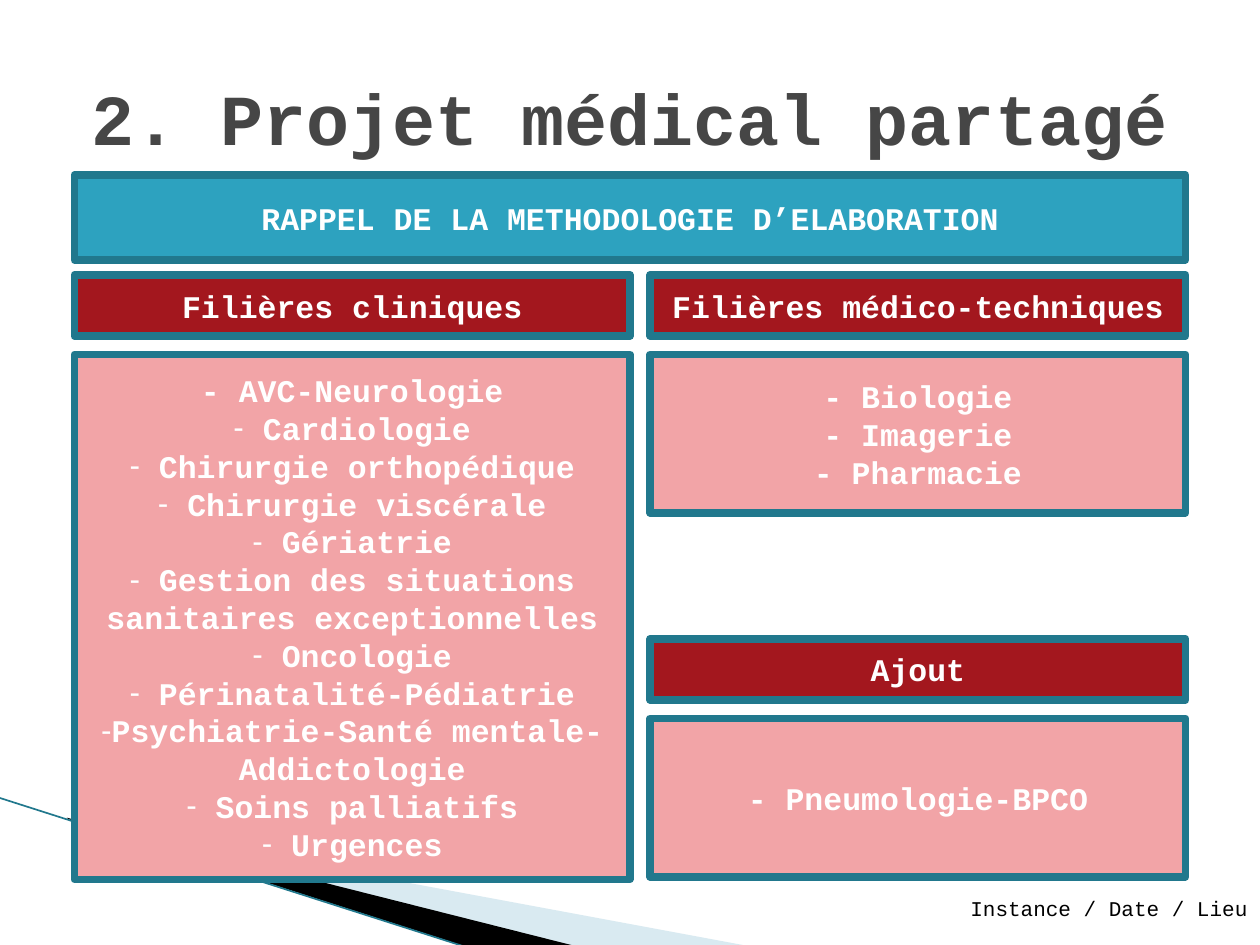
from lxml import etree
from pptx import Presentation
from pptx.dml.color import RGBColor
from pptx.enum.shapes import MSO_CONNECTOR, MSO_SHAPE
from pptx.enum.text import MSO_ANCHOR, MSO_AUTO_SIZE, PP_ALIGN
from pptx.oxml.ns import qn
from pptx.util import Pt

RECT = MSO_SHAPE.RECTANGLE
STRAIGHT = MSO_CONNECTOR.STRAIGHT
MIDDLE = MSO_ANCHOR.MIDDLE
NO_AUTOFIT = MSO_AUTO_SIZE.NONE
CENTER, RIGHT = PP_ALIGN.CENTER, PP_ALIGN.RIGHT

FONT = "Courier New"
WHITE = RGBColor(0xFF, 0xFF, 0xFF)
BLACK = RGBColor(0, 0, 0)
GREY = RGBColor(0x46, 0x46, 0x46)
BLUE = RGBColor(0x2D, 0xA2, 0xBF)
TEAL = RGBColor(0x21, 0x78, 0x8D)
PALE_BLUE = RGBColor(0xA0, 0xCB, 0xDC)
RED = RGBColor(0xA3, 0x17, 0x1E)
PINK = RGBColor(0xF2, 0xA4, 0xA7)

LEFT, LEFT_W = 42.5, 317.5
RIGHT_X, RIGHT_W = 371.5, 306
FULL_W = RIGHT_X + RIGHT_W - LEFT
HEAD_H, LIST_H = 35, 90.5
LIST_OFFSET = 45.5  # from the top of a heading to the top of its list

CLINICAL = [
    "- AVC-Neurologie", " Cardiologie", " Chirurgie orthopédique",
    " Chirurgie viscérale", " Gériatrie",
    " Gestion des situations sanitaires exceptionnelles", " Oncologie",
    " Périnatalité-Pédiatrie", "Psychiatrie-Santé mentale-Addictologie",
    " Soins palliatifs", " Urgences",
]
TECHNICAL = ["- Biologie", "- Imagerie", "- Pharmacie"]
ADDED = ["- Pneumologie-BPCO"]


def format_text(tf, size, color, bold, align):
    for p in tf.paragraphs:
        p.alignment = align
        for r in p.runs:
            r.font.name = FONT
            r.font.size = Pt(size)
            r.font.bold = bold
            r.font.color.rgb = color


def add_dash_bullet(p):
    pPr = p._p.get_or_add_pPr()
    pPr.set("marL", "0")
    pPr.set("indent", "0")
    etree.SubElement(pPr, qn("a:buFont")).set("typeface", "Arial")
    etree.SubElement(pPr, qn("a:buChar")).set("char", "-")


def add_box(slide, x, y, w, h, fill, lines):
    """Add a framed box; lines that lack a typed dash after the first get a bullet."""
    s = slide.shapes.add_shape(RECT, Pt(x), Pt(y), Pt(w), Pt(h))
    s.shadow.inherit = False
    s.fill.solid()
    s.fill.fore_color.rgb = fill
    s.line.color.rgb = TEAL
    s.line.width = Pt(4.33)
    tf = s.text_frame
    tf.word_wrap = True
    tf.vertical_anchor = MIDDLE
    tf.text = "\n".join(lines)
    for p in tf.paragraphs[1:]:
        if not p.text.startswith("-"):
            add_dash_bullet(p)
    format_text(tf, 18, WHITE, True, CENTER)


def add_section(slide, x, y, w, heading, lines, list_h=LIST_H):
    add_box(slide, x, y + LIST_OFFSET, w, list_h, PINK, lines)
    add_box(slide, x, y, w, HEAD_H, RED, [heading])


def add_band(slide, points, fill, opacity=None):
    start, *rest = [(Pt(x), Pt(y)) for x, y in points]
    builder = slide.shapes.build_freeform(*start)
    builder.add_line_segments(rest, close=True)
    s = builder.convert_to_shape()
    s.shadow.inherit = False
    s.fill.solid()
    s.fill.fore_color.rgb = fill
    s.line.fill.background()
    if opacity is not None:
        color = s._element.spPr.find(qn("a:solidFill"))[0]
        etree.SubElement(color, qn("a:alpha")).set("val", str(opacity * 1000))


def add_corner_line(slide):
    s = slide.shapes.add_connector(STRAIGHT, Pt(-0.7), Pt(455.8), Pt(267), Pt(541.4))
    s.line.color.rgb = TEAL
    s.line.width = Pt(0.95)
    etree.SubElement(s._element.spPr, qn("a:effectLst"))


def set_title(slide, text):
    s = slide.shapes.title
    s.left, s.top, s.width, s.height = Pt(36), Pt(21.6), Pt(648), Pt(90)
    tf = s.text_frame
    tf.text = text
    tf.auto_size = NO_AUTOFIT
    tf.vertical_anchor = MIDDLE
    format_text(tf, 41, GREY, True, CENTER)


def add_footer(slide, text):
    s = slide.shapes.add_textbox(Pt(363), Pt(508.3), Pt(357), Pt(21.6))
    tf = s.text_frame
    tf.word_wrap = True
    tf.text = text
    format_text(tf, 12, BLACK, False, RIGHT)


def main():
    prs = Presentation()
    prs.slide_width, prs.slide_height = Pt(720), Pt(540)
    slide = prs.slides.add_slide(prs.slide_layouts[5])

    add_band(slide, [(39.6, 468.5), (428.4, 540.7), (328.3, 540.7), (39.6, 468)],
             PALE_BLUE, 40)
    add_band(slide, [(38.2, 467.3), (329, 540.7), (267.8, 541.4), (38.9, 468)], BLACK)
    add_corner_line(slide)

    set_title(slide, "2. Projet médical partagé")
    add_footer(slide, "Instance / Date / Lieu")
    add_box(slide, LEFT, 100, FULL_W, 48.5, BLUE,
            ["RAPPEL DE LA METHODOLOGIE D’ELABORATION"])
    add_section(slide, LEFT, 157, LEFT_W, "Filières cliniques", CLINICAL, 300)
    add_section(slide, RIGHT_X, 157, RIGHT_W, "Filières médico-techniques", TECHNICAL)
    add_section(slide, RIGHT_X, 365, RIGHT_W, "Ajout", ADDED)

    prs.save("out.pptx")


if __name__ == "__main__":
    main()
